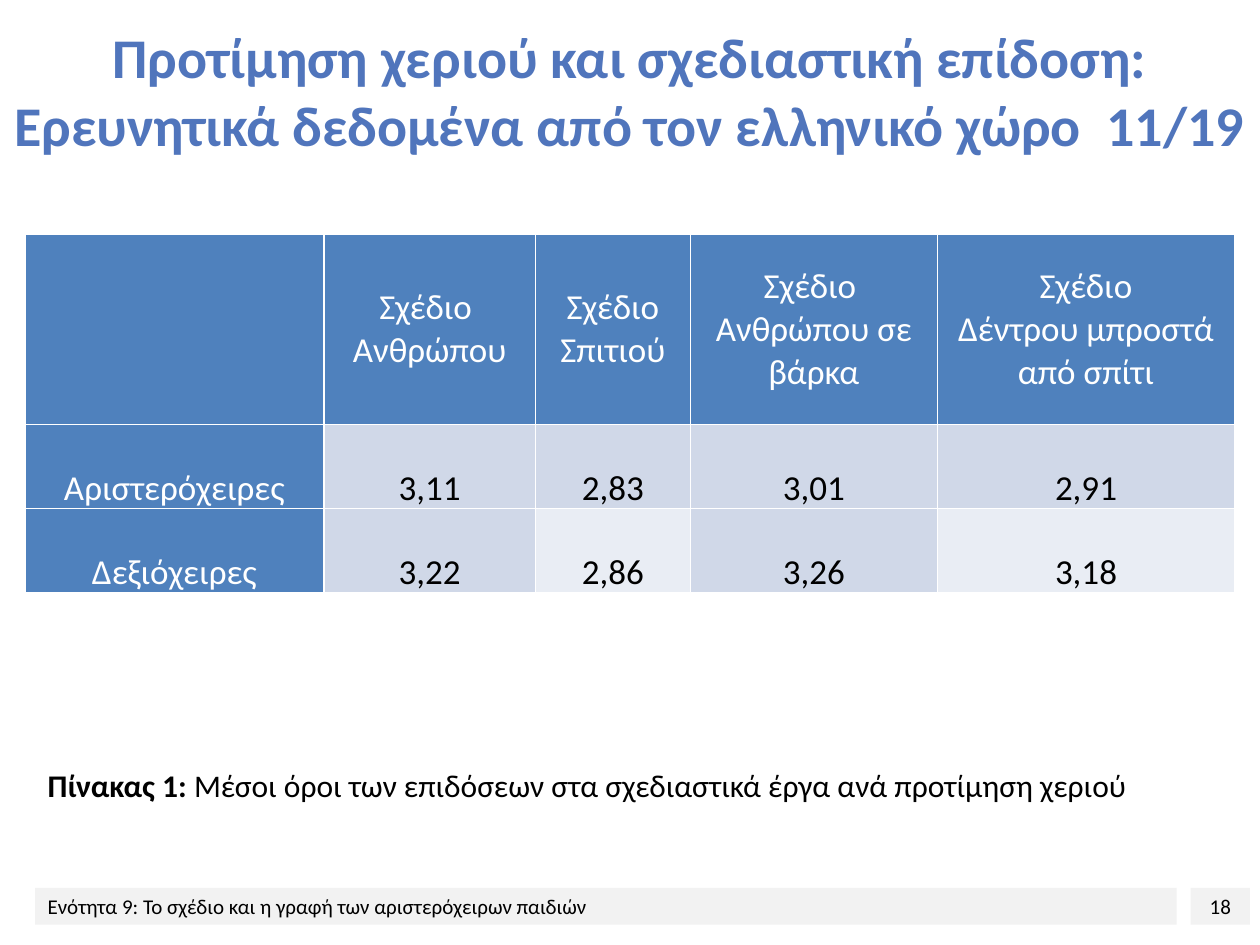
from pptx import Presentation
from pptx.dml.color import RGBColor
from pptx.enum.shapes import MSO_SHAPE as Shape
from pptx.enum.text import MSO_ANCHOR as Anchor, PP_ALIGN as Align
from pptx.oxml import parse_xml
from pptx.oxml.ns import nsdecls
from pptx.util import Inches, Pt

WIDTH, HEIGHT = Inches(10), Inches(7.5)
FONT = "Calibri"
WHITE = RGBColor(0xFF, 0xFF, 0xFF)
BLACK = RGBColor(0x00, 0x00, 0x00)
TITLE_BLUE = RGBColor(0x50, 0x75, 0xBC)
HEADER_BLUE = RGBColor(0x4F, 0x81, 0xBD)
BAND_DARK = RGBColor(0xD0, 0xD8, 0xE8)
BAND_LIGHT = RGBColor(0xE9, 0xED, 0xF4)
FOOTER_GRAY = RGBColor(0xF2, 0xF2, 0xF2)

# Shares of the slide's width and height, in percent
COLUMN_SHARES = [23.7, 16.8, 12.3, 19.6, 23.6]
ROW_SHARES = [20.13, 7.2, 8.67]
HEADERS = ["", "Σχέδιο  Ανθρώπου", "Σχέδιο\nΣπιτιού",
           "Σχέδιο  Ανθρώπου σε βάρκα", "Σχέδιο\nΔέντρου μπροστά από σπίτι"]
ROWS = [
    ["Αριστερόχειρες", "3,11", "2,83", "3,01", "2,91"],
    ["Δεξιόχειρες", "3,22", "2,86", "3,26", "3,18"],
]


def across(percent):
    return round(WIDTH * percent / 100)


def down(percent):
    return round(HEIGHT * percent / 100)


def to_lengths(box):
    left, top, width, height = box
    return across(left), down(top), across(width), down(height)


def style(paragraph, size, color, align=Align.LEFT):
    paragraph.alignment = align
    font = paragraph.font
    font.name, font.size, font.color.rgb = FONT, Pt(size), color


def add_title(slide, box):
    frame = slide.shapes.add_textbox(*to_lengths(box)).text_frame
    frame.word_wrap = True
    frame.vertical_anchor = Anchor.MIDDLE
    paragraph = frame.paragraphs[0]
    paragraph.text = ("Προτίμηση χεριού και σχεδιαστική επίδοση:\v"
                      "Ερευνητικά δεδομένα από τον ελληνικό χώρο  11/19")
    style(paragraph, 32, TITLE_BLUE, Align.CENTER)
    paragraph.font.bold = True


def add_borders(cell):
    properties = cell._tc.get_or_add_tcPr()
    for position, side in enumerate("LRTB"):
        properties.insert(position, parse_xml(
            f'<a:ln{side} {nsdecls("a")} w="{Pt(1)}"><a:solidFill>'
            f'<a:srgbClr val="{WHITE}"/></a:solidFill></a:ln{side}>'))


def cell_fill(row, column):
    if row == 0 or column == 0:
        return HEADER_BLUE
    return BAND_LIGHT if row == 2 and column % 2 == 0 else BAND_DARK


def fill_cell(cell, text, row, column):
    cell.margin_left = cell.margin_right = Inches(0.07)
    cell.margin_top = cell.margin_bottom = 0
    cell.vertical_anchor = Anchor.BOTTOM if row else Anchor.MIDDLE
    cell.fill.solid()
    cell.fill.fore_color.rgb = cell_fill(row, column)
    add_borders(cell)
    cell.text = text
    for paragraph in cell.text_frame.paragraphs:
        style(paragraph, 20, BLACK if row and column else WHITE, Align.CENTER)
        if row:
            paragraph.line_spacing = 2.0


def add_scores_table(slide, left, top):
    box = (left, top, sum(COLUMN_SHARES), sum(ROW_SHARES))
    table = slide.shapes.add_table(
        len(ROW_SHARES), len(COLUMN_SHARES), *to_lengths(box)).table
    for column, share in zip(table.columns, COLUMN_SHARES):
        column.width = across(share)
    for row, share in zip(table.rows, ROW_SHARES):
        row.height = down(share)
    for row, texts in enumerate([HEADERS, *ROWS]):
        for column, text in enumerate(texts):
            fill_cell(table.cell(row, column), text, row, column)


def add_caption(slide, box):
    frame = slide.shapes.add_textbox(*to_lengths(box)).text_frame
    frame.word_wrap = True
    paragraph = frame.paragraphs[0]
    label = paragraph.add_run()
    label.text = "Πίνακας 1: "
    label.font.bold = True
    paragraph.add_run().text = (
        "Μέσοι όροι των επιδόσεων στα σχεδιαστικά έργα ανά προτίμηση χεριού")
    style(paragraph, 18, BLACK)


def add_footer_bar(slide, box, text, align):
    bar = slide.shapes.add_shape(Shape.RECTANGLE, *to_lengths(box))
    bar.shadow.inherit = False
    bar.fill.solid()
    bar.fill.fore_color.rgb = FOOTER_GRAY
    bar.line.fill.background()
    frame = bar.text_frame
    frame.word_wrap = True
    frame.vertical_anchor = Anchor.MIDDLE
    paragraph = frame.paragraphs[0]
    paragraph.text = text
    style(paragraph, 12, BLACK, align)


def main():
    presentation = Presentation()
    presentation.slide_width, presentation.slide_height = WIDTH, HEIGHT
    slide = presentation.slides.add_slide(presentation.slide_layouts[6])
    add_footer_bar(slide, (94.5, 93.95, 4.7, 3.9), "18", Align.CENTER)
    add_footer_bar(slide, (2.8, 93.95, 90.6, 3.9),
                   "Ενότητα 9: Το σχέδιο και η γραφή των αριστερόχειρων παιδιών",
                   Align.LEFT)
    add_title(slide, (0, 1.73, 100, 15.6))
    add_caption(slide, (2.8, 80.4, 92.5, 5.33))
    add_scores_table(slide, 2, 24.8)
    presentation.save("out.pptx")


if __name__ == "__main__":
    main()
